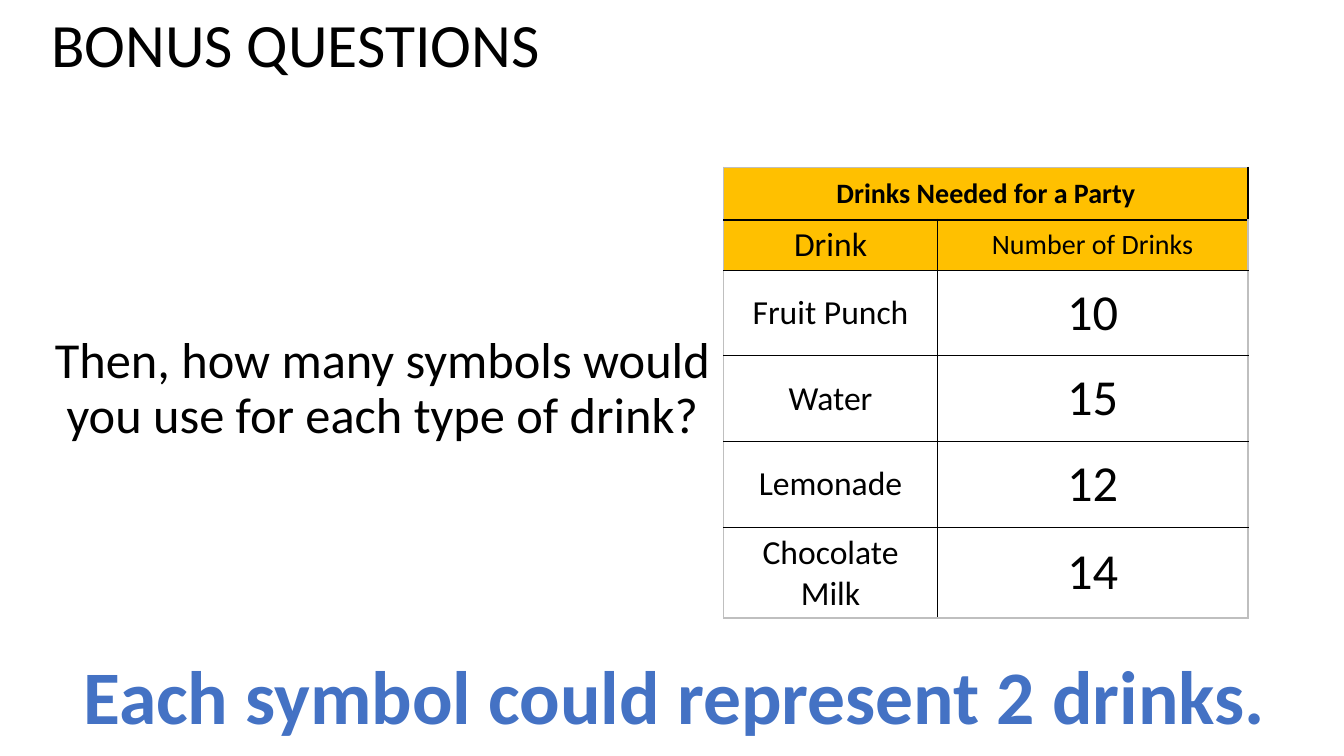
import pptx
import pptx.dml.color
import pptx.enum.text
import pptx.oxml
import pptx.oxml.ns
import pptx.util

Pt = pptx.util.Pt
RGBColor = pptx.dml.color.RGBColor
PP_ALIGN = pptx.enum.text.PP_ALIGN
MSO_ANCHOR = pptx.enum.text.MSO_ANCHOR

BLACK = RGBColor(0x00, 0x00, 0x00)
GOLD = RGBColor(0xFF, 0xC0, 0x00)
BLUE = RGBColor(0x44, 0x72, 0xC4)
GREY = RGBColor(0xBF, 0xBF, 0xBF)

DRINKS = [("Fruit Punch", "10"), ("Water", "15"), ("Lemonade", "12"), ("Chocolate Milk", "14")]


class QuestionSlide:
    """Holds the text style and the slide that receives each element."""

    font = "Calibri"

    def __init__(self, deck):
        self.slide = deck.slides.add_slide(deck.slide_layouts[6])

    def add_words(self, frame, words, size, color=BLACK, bold=False, align=PP_ALIGN.CENTER):
        paragraph = frame.paragraphs[0]
        paragraph.alignment = align
        run = paragraph.add_run()
        run.text = words
        run.font.name = self.font
        run.font.size = Pt(size)
        run.font.bold = bold
        run.font.color.rgb = color
        return paragraph

    def add_text(self, box, words, size, anchor=MSO_ANCHOR.TOP, top=3.6, spacing=1.0, wrap=True, **style):
        frame = self.slide.shapes.add_textbox(*map(Pt, box)).text_frame
        frame.word_wrap = wrap
        frame.vertical_anchor = anchor
        frame.margin_top = Pt(top)
        self.add_words(frame, words, size, **style).line_spacing = spacing

    def add_border(self, cell, side, color, width):
        line = pptx.oxml.parse_xml(
            f'<a:{side} {pptx.oxml.ns.nsdecls("a")} w="{int(Pt(width))}">'
            f'<a:solidFill><a:srgbClr val="{color}"/></a:solidFill></a:{side}>'
        )
        cell._tc.get_or_add_tcPr().append(line)

    def add_table(self, box, widths, heights, rows, header_rows):
        grid = self.slide.shapes.add_table(len(rows), len(widths), *map(Pt, box)).table
        grid.first_row = grid.horz_banding = False
        for column, width in zip(grid.columns, widths):
            column.width = Pt(width)
        for row, height in zip(grid.rows, heights):
            row.height = Pt(height)
        last_row, last_column = len(rows) - 1, len(widths) - 1
        for r, entries in enumerate(rows):
            for c, (words, size, bold) in enumerate(entries):
                cell = grid.cell(r, c)
                edges = {"lnL": c == 0, "lnR": c == last_column, "lnT": r == 0, "lnB": r == last_row}
                for side, outer in edges.items():
                    under_title = (r, side) in ((0, "lnB"), (1, "lnT"))
                    self.add_border(cell, side, GREY if outer else BLACK, 1.5 if under_title else 1)
                if r < header_rows:
                    cell.fill.solid()
                    cell.fill.fore_color.rgb = GOLD
                else:
                    cell.fill.background()
                cell.vertical_anchor = MSO_ANCHOR.MIDDLE
                if words:
                    self.add_words(cell.text_frame, words, size, bold=bold)
        grid.cell(0, 0).merge(grid.cell(0, last_column))


def main():
    deck = pptx.Presentation()
    deck.slide_width, deck.slide_height = Pt(960), Pt(540)
    bonus = QuestionSlide(deck)
    bonus.add_text((29.5, 0, 828, 67.5), "BONUS QUESTIONS", 44,
                   anchor=MSO_ANCHOR.MIDDLE, spacing=0.9, align=PP_ALIGN.LEFT)
    bonus.add_text((29.5, 135.5, 487.5, 325.5),
                   "Then, how many symbols would you use for each type of drink?", 36, top=104, spacing=0.9)
    headings = [
        [("Drinks Needed for a Party", 20, True), ("", 20, True)],
        [("Drink", 24, False), ("Number of Drinks", 20, False)],
    ]
    counts = [[(drink, 24, False), (number, 36, False)] for drink, number in DRINKS]
    bonus.add_table((517, 119.5, 374.5, 322), (152.5, 222), [37.5, 34] + [61.2] * len(DRINKS),
                    headings + counts, len(headings))
    bonus.add_text((48, 460, 867.5, 72.5), "Each symbol could represent 2 drinks.", 54,
                   wrap=False, color=BLUE, bold=True)
    deck.save("out.pptx")


if __name__ == "__main__":
    main()
